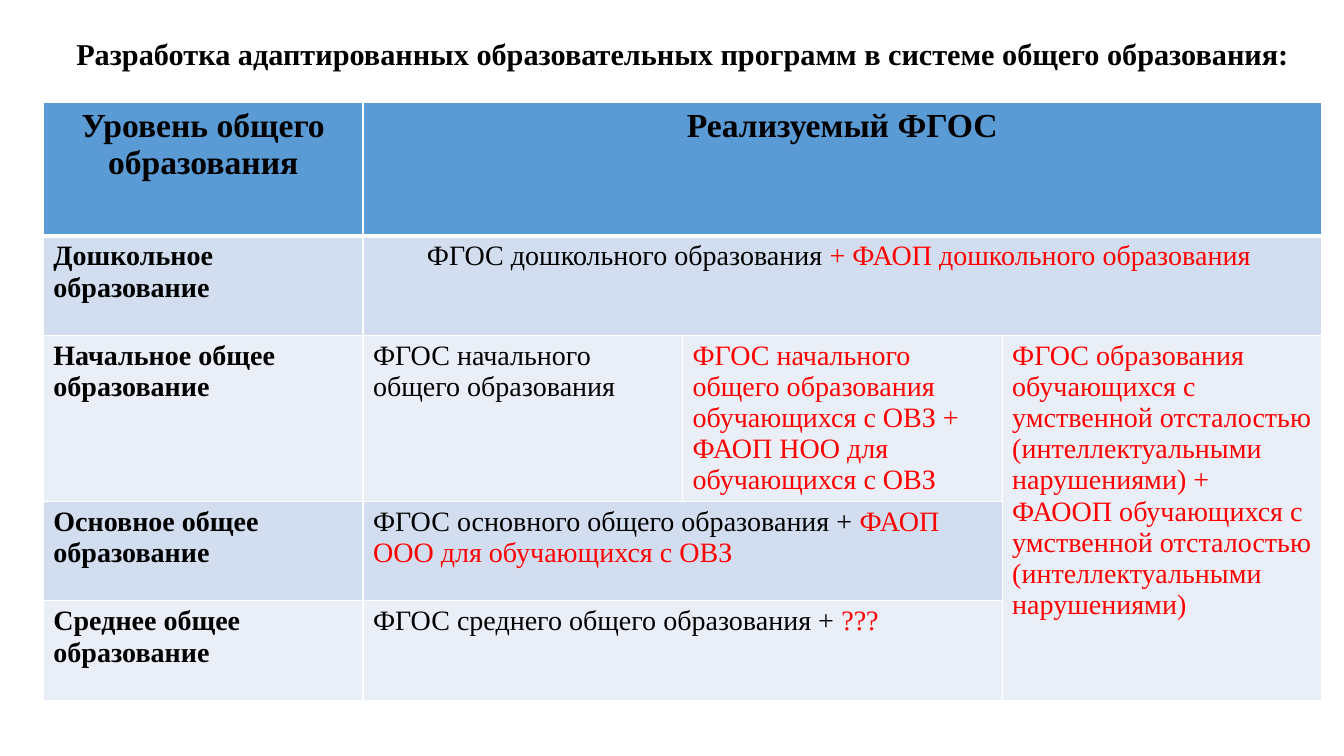
from dataclasses import dataclass

import pptx
import pptx.dml.color
import pptx.enum.text
import pptx.oxml
import pptx.oxml.ns
import pptx.table
import pptx.util

RGBColor = pptx.dml.color.RGBColor
PP_ALIGN = pptx.enum.text.PP_ALIGN

BLACK = RGBColor(0x00, 0x00, 0x00)
RED = RGBColor(0xFF, 0x00, 0x00)
WHITE = RGBColor(0xFF, 0xFF, 0xFF)
HEADER_BLUE = RGBColor(0x5B, 0x9B, 0xD5)
BAND_DARK = RGBColor(0xD2, 0xDE, 0xEF)
BAND_LIGHT = RGBColor(0xEA, 0xEF, 0xF7)

FONT = "Times New Roman"
SLIDE_W, SLIDE_H = pptx.util.Inches(13.33), pptx.util.Inches(7.5)

# Slide grid: one left edge, four equal columns
LEFT = pptx.util.Inches(0.43)
COLUMN = pptx.util.Inches(3.17)
COLUMNS = 4
TITLE_TOP, TITLE_HEIGHT = pptx.util.Inches(0.4), pptx.util.Inches(0.3)
TABLE_TOP, TABLE_HEIGHT = pptx.util.Inches(1.02), pptx.util.Inches(6.06)
ROW_HEIGHTS = (1.32, 0.99, 1.42, 0.99, 0.99)
ROW_FILLS = (HEADER_BLUE, BAND_DARK, BAND_LIGHT, BAND_DARK, BAND_LIGHT)


@dataclass(frozen=True)
class Entry:
    row: int
    col: int
    black: str = ""
    red: str = ""
    rows: int = 1
    cols: int = 1
    centred: bool = False


ENTRIES = (
    Entry(0, 0, "Уровень общего образования", centred=True),
    Entry(0, 1, "Реализуемый ФГОС", cols=3, centred=True),
    Entry(1, 0, "Дошкольное образование"),
    Entry(1, 1, "ФГОС дошкольного образования ", "+ ФАОП дошкольного образования ",
          cols=3, centred=True),
    Entry(2, 0, "Начальное общее образование"),
    Entry(2, 1, "ФГОС начального общего образования"),
    Entry(2, 2, red="ФГОС начального общего образования обучающихся с ОВЗ + "
                    "ФАОП НОО для обучающихся с ОВЗ"),
    Entry(2, 3, red="ФГОС образования обучающихся с умственной отсталостью "
                    "(интеллектуальными нарушениями) + ФАООП обучающихся с "
                    "умственной отсталостью (интеллектуальными нарушениями)",
          rows=3),
    Entry(3, 0, "Основное общее образование"),
    Entry(3, 1, "ФГОС основного общего образования + ",
          "ФАОП ООО для обучающихся с ОВЗ", cols=2),
    Entry(4, 0, "Среднее общее образование"),
    Entry(4, 1, "ФГОС среднего общего образования + ", "???", cols=2),
)


def format_run(r, size: float, bold: bool, color: RGBColor) -> None:
    r.font.name = FONT
    r.font.size = pptx.util.Pt(size)
    r.font.bold = bold
    r.font.color.rgb = color


def set_borders(cell: pptx.table._Cell, row: int) -> None:
    """White cell lines, thicker between the header and the body."""
    widths = {"L": 1, "R": 1, "T": 3 if row == 1 else 1, "B": 3 if row == 0 else 1}
    tc_pr = cell._tc.get_or_add_tcPr()
    for i, (side, width) in enumerate(widths.items()):
        tc_pr.insert(i, pptx.oxml.parse_xml(
            f'<a:ln{side} {pptx.oxml.ns.nsdecls("a")} w="{pptx.util.Pt(width)}">'
            f'<a:solidFill><a:srgbClr val="{WHITE}"/></a:solidFill></a:ln{side}>'))


def fill_entry(table: pptx.table.Table, entry: Entry) -> None:
    cell = table.cell(entry.row, entry.col)
    if entry.rows > 1 or entry.cols > 1:
        cell.merge(table.cell(entry.row + entry.rows - 1, entry.col + entry.cols - 1))
    p = cell.text_frame.paragraphs[0]
    p.alignment = PP_ALIGN.CENTER if entry.centred else PP_ALIGN.LEFT
    size = 24 if entry.row == 0 else 20
    bold = entry.row == 0 or entry.col == 0
    for text, color in ((entry.black, BLACK), (entry.red, RED)):
        if text:
            r = p.add_run()
            r.text = text
            format_run(r, size, bold, color)


def add_title(slide, text: str) -> None:
    sp = slide.shapes.title
    sp.left, sp.top = LEFT, TITLE_TOP
    sp.width, sp.height = COLUMN * COLUMNS, TITLE_HEIGHT
    tf = sp.text_frame
    tf.text = text
    tf.word_wrap = True
    tf.auto_size = pptx.enum.text.MSO_AUTO_SIZE.NONE
    tf.vertical_anchor = pptx.enum.text.MSO_ANCHOR.MIDDLE
    p = tf.paragraphs[0]
    p.alignment = PP_ALIGN.CENTER
    p.line_spacing = 0.9
    format_run(p.runs[0], 21.6, True, BLACK)


def add_standards_table(slide) -> None:
    sp = slide.shapes.add_table(len(ROW_HEIGHTS), COLUMNS, LEFT, TABLE_TOP,
                                COLUMN * COLUMNS, TABLE_HEIGHT)
    table = sp.table
    for i, (height, color) in enumerate(zip(ROW_HEIGHTS, ROW_FILLS)):
        table.rows[i].height = pptx.util.Inches(height)
        for cell in table.rows[i].cells:
            cell.fill.solid()
            cell.fill.fore_color.rgb = color
            set_borders(cell, i)
    for entry in ENTRIES:
        fill_entry(table, entry)
    sp.height = TABLE_HEIGHT


def main() -> None:
    prs = pptx.Presentation()
    prs.slide_width, prs.slide_height = SLIDE_W, SLIDE_H
    slide = prs.slides.add_slide(prs.slide_layouts[5])

    # Heading
    add_title(slide, "Разработка адаптированных образовательных программ "
                     "в системе общего образования:")
    # Education levels and their standards
    add_standards_table(slide)

    prs.save("out.pptx")


if __name__ == "__main__":
    main()
